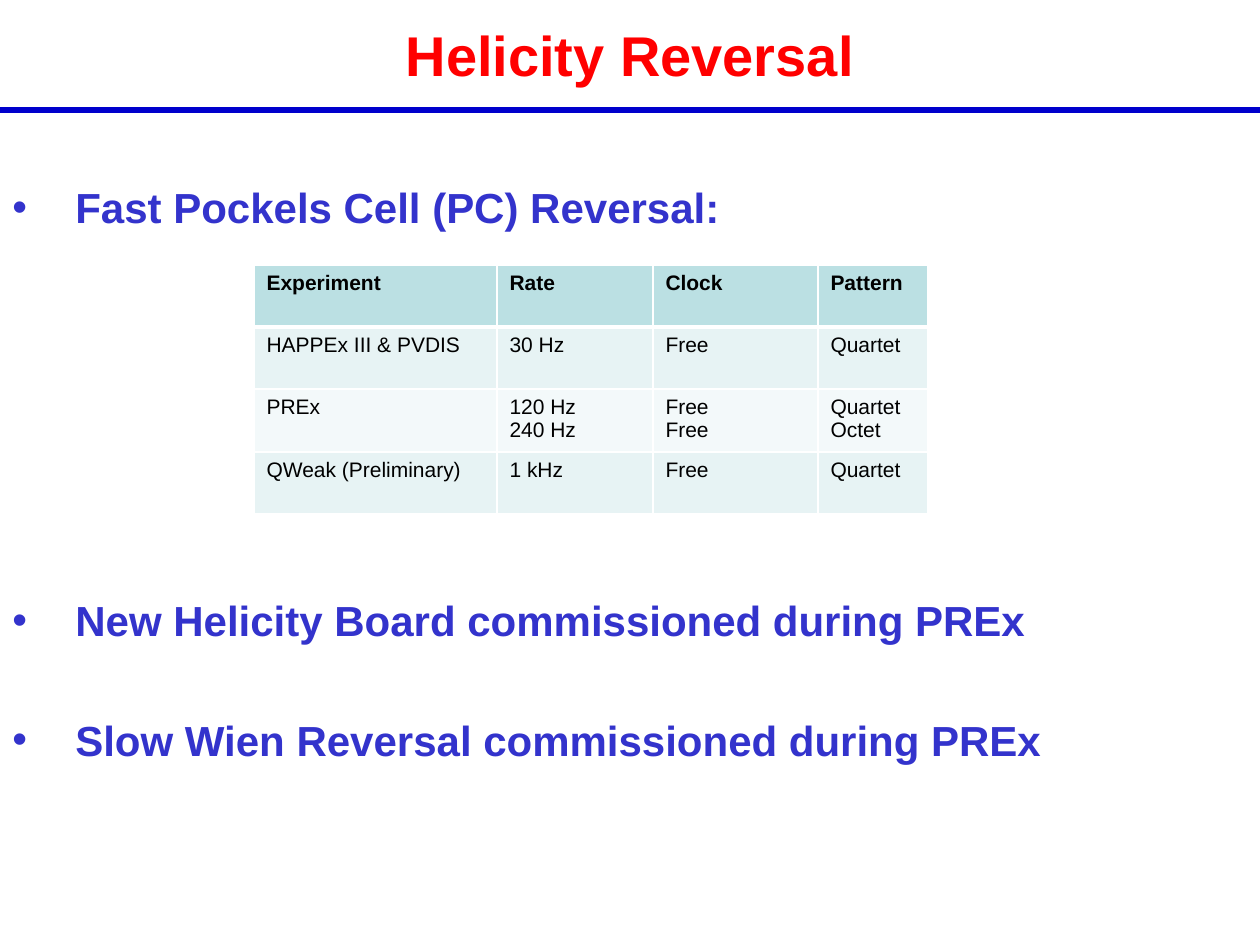
from lxml.etree import SubElement
from pptx import Presentation
from pptx.dml.color import RGBColor
from pptx.enum.shapes import MSO_SHAPE
from pptx.enum.text import MSO_ANCHOR, PP_ALIGN
from pptx.oxml.ns import qn
from pptx.util import Emu, Pt

RED = RGBColor(0xFF, 0x00, 0x00)
RULE_BLUE = RGBColor(0x00, 0x00, 0xCC)
TEXT_BLUE = RGBColor(0x33, 0x33, 0xCC)
BLACK = RGBColor(0x00, 0x00, 0x00)
WHITE = RGBColor(0xFF, 0xFF, 0xFF)
HEADER_TEAL = RGBColor(0xBB, 0xE0, 0xE3)
BANDS = (RGBColor(0xF3, 0xF9, 0xFA), RGBColor(0xE7, 0xF3, 0xF4))

PX_PER_INCH = 126
SLIDE_WIDTH, SLIDE_HEIGHT = 1260, 945

TITLE_FORMAT = {"name": "Arial", "size": Pt(32), "bold": True}
POINT_FORMAT = {"name": "Arial", "size": Pt(24), "bold": True}
CELL_FORMAT = {"name": "Arial", "size": Pt(12)}

POINTS = [
    ("Fast Pockels Cell (PC) Reversal:", 0),
    ("New Helicity Board commissioned during PREx", 207),
    ("Slow Wien Reversal commissioned during PREx", 39.5),
]
COLUMN_WIDTHS = (243, 156, 165, 110)
ROW_HEIGHT = 62
REVERSAL_RATES = [
    ("Experiment", "Rate", "Clock", "Pattern"),
    ("HAPPEx III & PVDIS", "30 Hz", "Free", "Quartet"),
    ("PREx", "120 Hz\n240 Hz", "Free\nFree", "Quartet\nOctet"),
    ("QWeak (Preliminary)", "1 kHz", "Free", "Quartet"),
]


def px(length):
    return Emu(length * 914400 // PX_PER_INCH)


def set_attributes(target, values):
    for attribute, value in values.items():
        setattr(target, attribute, value)


def format_font(font, values, color):
    set_attributes(font, values)
    font.color.rgb = color


def place(shape, left, top, width, height):
    set_attributes(shape, {"left": px(left), "top": px(top),
                           "width": px(width), "height": px(height)})


def add_title(slide, text):
    title = slide.shapes.title
    place(title, 0, 10, SLIDE_WIDTH, 95)
    frame = title.text_frame
    frame.text = text
    set_attributes(frame, {"vertical_anchor": MSO_ANCHOR.MIDDLE, "word_wrap": True,
                           "margin_top": px(6), "margin_bottom": px(12)})
    heading = frame.paragraphs[0]
    heading.alignment = PP_ALIGN.CENTER
    format_font(heading.runs[0].font, TITLE_FORMAT, RED)


def add_rule(slide):
    rule = slide.shapes.add_shape(MSO_SHAPE.RECTANGLE, 0, px(107), px(SLIDE_WIDTH), px(6))
    rule.shadow.inherit = False
    rule.fill.solid()
    rule.fill.fore_color.rgb = RULE_BLUE
    rule.line.fill.background()


def add_bullet(paragraph):
    properties = paragraph._p.get_or_add_pPr()
    properties.set("marL", str(px(63)))
    properties.set("indent", str(-px(63)))
    SubElement(properties, qn("a:buFont"), typeface="Arial")
    SubElement(properties, qn("a:buChar"), char="•")


def add_points(slide):
    frame = slide.shapes.add_textbox(0, px(112), px(SLIDE_WIDTH), px(766)).text_frame
    set_attributes(frame, {"word_wrap": True, "margin_top": px(70)})
    frame.text = "\n".join(text for text, _ in POINTS)
    for point, (_, gap) in zip(frame.paragraphs, POINTS):
        add_bullet(point)
        if gap:
            point.space_before = Pt(gap)
        format_font(point.runs[0].font, POINT_FORMAT, TEXT_BLUE)


def add_border(cell, side, width):
    properties = cell._tc.get_or_add_tcPr()
    border = SubElement(properties, qn(f"a:ln{side}"), w=str(Pt(width)))
    fill = SubElement(border, qn("a:solidFill"))
    SubElement(fill, qn("a:srgbClr"), val=str(WHITE))


def fill_cell(cell, text, row):
    is_header = row == 0
    widths = {"L": 1, "R": 1, "T": 3 if row == 1 else 1, "B": 3 if is_header else 1}
    for side, width in widths.items():
        add_border(cell, side, width)
    cell.fill.solid()
    cell.fill.fore_color.rgb = HEADER_TEAL if is_header else BANDS[row % 2]
    cell.text = text
    for paragraph in cell.text_frame.paragraphs:
        format_font(paragraph.runs[0].font, {**CELL_FORMAT, "bold": is_header}, BLACK)


def add_rate_table(slide):
    row_count = len(REVERSAL_RATES)
    table = slide.shapes.add_table(
        row_count, len(COLUMN_WIDTHS), px(254), px(265),
        px(sum(COLUMN_WIDTHS)), px(ROW_HEIGHT * row_count)).table
    set_attributes(table, {"first_row": False, "horz_banding": False})
    for column, width in zip(table.columns, COLUMN_WIDTHS):
        column.width = px(width)
    for row, texts in enumerate(REVERSAL_RATES):
        table.rows[row].height = px(ROW_HEIGHT)
        for column, text in enumerate(texts):
            fill_cell(table.cell(row, column), text, row)


def main():
    presentation = Presentation()
    set_attributes(presentation, {"slide_width": px(SLIDE_WIDTH),
                                  "slide_height": px(SLIDE_HEIGHT)})
    slide = presentation.slides.add_slide(presentation.slide_layouts[5])
    add_title(slide, "Helicity Reversal")
    add_rule(slide)
    add_points(slide)
    add_rate_table(slide)
    presentation.save("out.pptx")


if __name__ == "__main__":
    main()
